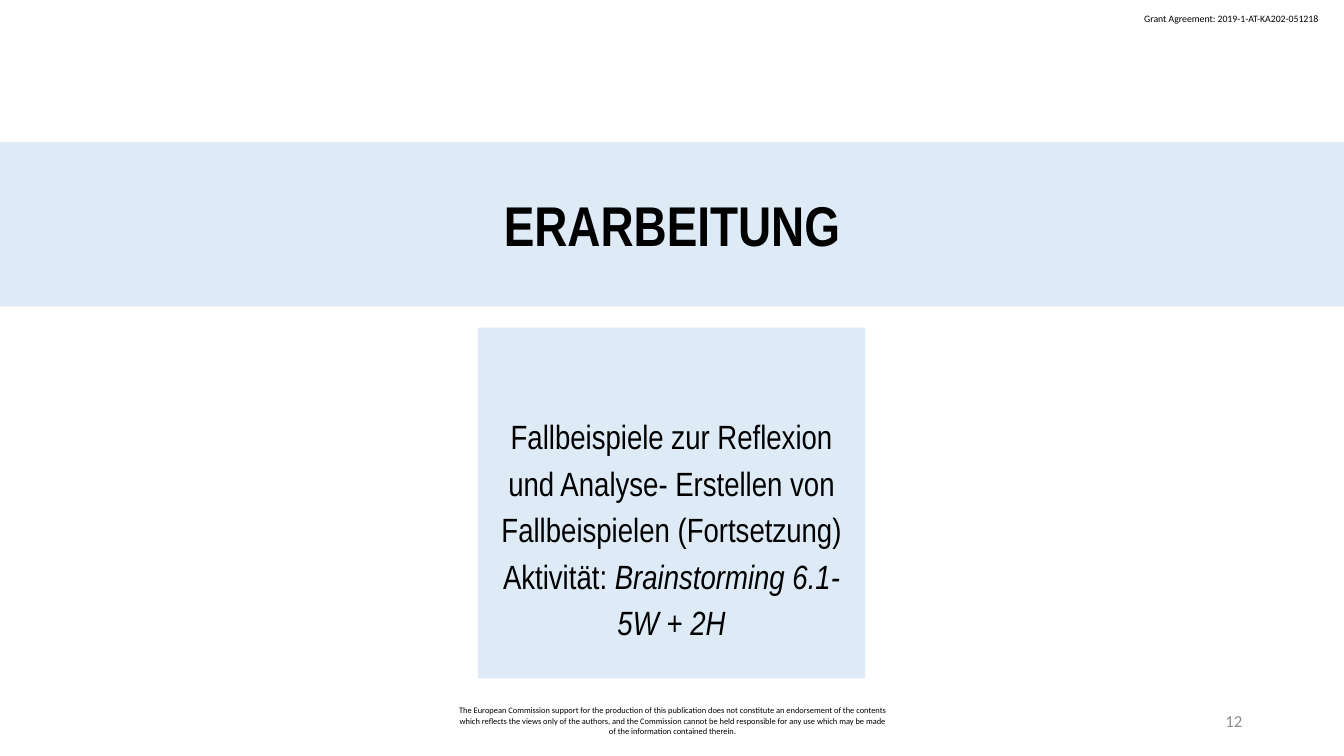
"""Build the section slide ERARBEITUNG with its activity panel."""
from pptx import Presentation, util as u
from pptx.dml.color import RGBColor
from pptx.enum import shapes, text

PX = 9144
PANEL = "DEEBF7"
BLACK = "000000"
ALIGN = text.PP_ALIGN
ANCHOR = text.MSO_ANCHOR


def px(*lengths):
    """Turn lengths in px into EMU."""
    return [u.Emu(length * PX) for length in lengths]


def colour(value):
    """Turn a hex string into a colour."""
    return RGBColor.from_string(value)


def paint(shape):
    """Give a shape the plain panel fill."""
    shape.fill.solid()
    shape.fill.fore_color.rgb = colour(PANEL)
    shape.line.fill.background()


def set_frame(shape, margins=(10, 5, 10, 5), anchor=ANCHOR.MIDDLE, wrap=True):
    """Set the margins, anchor and wrapping of a shape's text."""
    frame = shape.text_frame
    frame.auto_size = text.MSO_AUTO_SIZE.NONE
    frame.word_wrap = wrap
    frame.vertical_anchor = anchor
    (frame.margin_left, frame.margin_top,
     frame.margin_right, frame.margin_bottom) = px(*margins)
    return frame


def write(para, words, size, font="Calibri", ink=BLACK, align=ALIGN.LEFT,
          bold=False, italic=False, spacing=None):
    """Add a formatted span to a paragraph."""
    para.alignment = align
    if spacing:
        para.line_spacing = spacing
    span = para.add_run()
    span.text = words
    span.font.size = u.Pt(size)
    span.font.name = font
    span.font.bold = bold
    span.font.italic = italic
    span.font.color.rgb = colour(ink)


def add_label(page, place, words, anchor=ANCHOR.MIDDLE, wrap=True, **style):
    """Add a small text box with one paragraph."""
    box = page.shapes.add_textbox(*px(*place))
    frame = set_frame(box, anchor=anchor, wrap=wrap)
    write(frame.paragraphs[0], words, **style)


def add_title(page, words):
    """Turn the title placeholder into the full-width band."""
    title = page.shapes.title
    title.left, title.top, title.width, title.height = px(0, 141, 1333, 163)
    paint(title)
    frame = set_frame(title, (13, 7, 13, 7))
    write(frame.paragraphs[0], words, 40, "Arial Narrow",
          align=ALIGN.CENTER, bold=True)


def add_activity(page, topic, label, activity):
    """Add the panel that names the topic and its activity."""
    panel = page.shapes.add_shape(shapes.MSO_SHAPE.RECTANGLE,
                                  *px(474, 325, 384, 348))
    panel.shadow.inherit = False
    paint(panel)
    frame = set_frame(panel, (13, 53, 13, 7))
    style = dict(size=24, font="Arial Narrow", align=ALIGN.CENTER, spacing=1.15)
    write(frame.paragraphs[0], topic, **style)
    para = frame.add_paragraph()
    write(para, label, **style)
    write(para, activity, italic=True, **style)


def main():
    """Build and save the deck."""
    deck = Presentation()
    deck.slide_width, deck.slide_height = px(1333, 750)
    page = deck.slides.add_slide(deck.slide_layouts.get_by_name("Title Only"))
    add_label(page, (1125, 8, 197, 22), "Grant Agreement: 2019-1-AT-KA202-051218",
              anchor=ANCHOR.TOP, wrap=False, size=7)
    add_label(page, (442, 695, 450, 40),
              "The European Commission support for the production of this "
              "publication does not constitute an endorsement of the contents "
              "which reflects the views only of the authors, and the Commission "
              "cannot be held responsible for any use which may be made of the "
              "information contained therein.", size=6, align=ALIGN.CENTER)
    add_label(page, (942, 695, 300, 40), "12", size=12, ink="8C8C8C",
              align=ALIGN.RIGHT)
    add_title(page, "ERARBEITUNG")
    add_activity(page, "Fallbeispiele zur Reflexion und Analyse- Erstellen von "
                 "Fallbeispielen (Fortsetzung)", "Aktivität: ",
                 "Brainstorming 6.1- 5W + 2H")
    deck.save("out.pptx")


if __name__ == "__main__":
    main()
